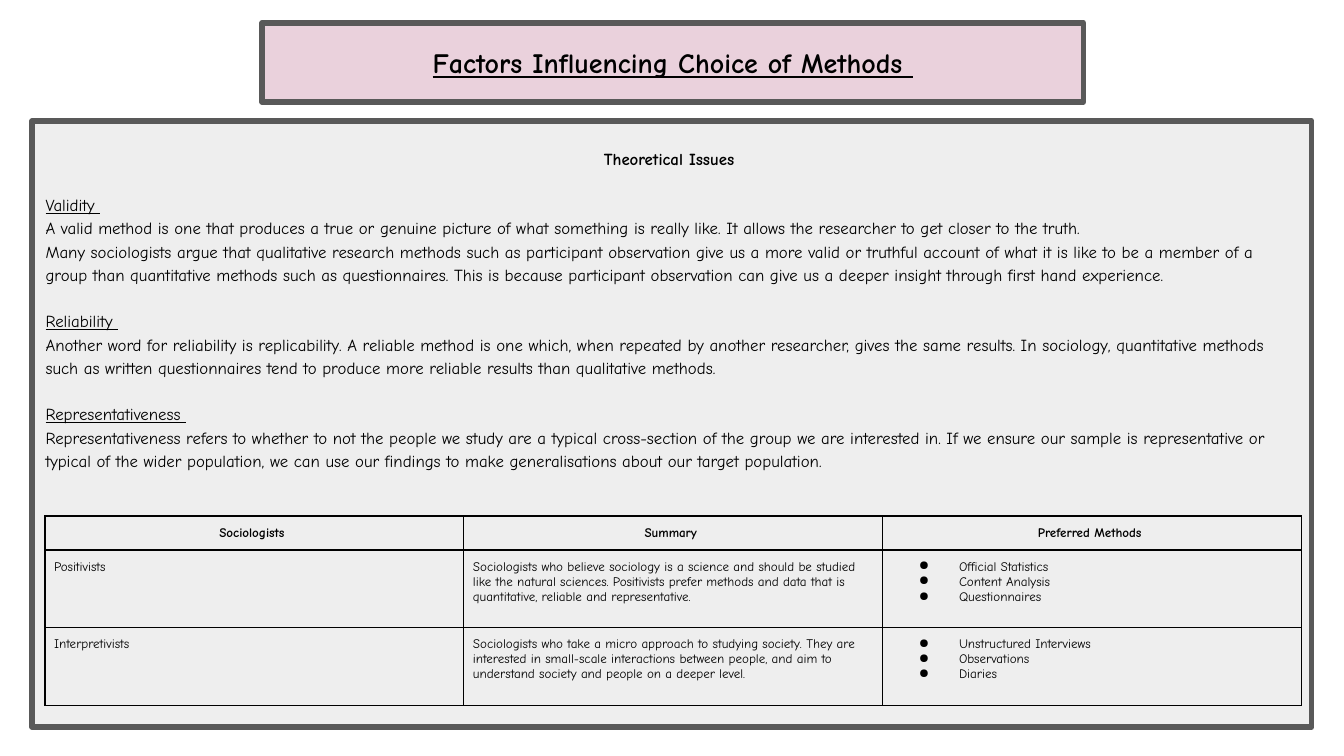
from lxml.etree import SubElement as Sub
from pptx import Presentation
from pptx.dml.color import RGBColor
from pptx.enum.text import MSO_ANCHOR as Anchor, PP_ALIGN as Align
from pptx.enum.shapes import MSO_SHAPE as Shape
from pptx.oxml import parse_xml
from pptx.oxml.ns import nsdecls, qn
from pptx.util import Pt

MARGINS = ("margin_left", "margin_right", "margin_top", "margin_bottom")
PLAIN = {"size": Pt(9), "bold": False, "underline": False}
BOLD = {**PLAIN, "bold": True}
HEAD = {**PLAIN, "underline": True}
TITLE = {"size": Pt(15), "bold": True, "underline": True}
SMALL = {**PLAIN, "size": Pt(7)}
LABEL = {**SMALL, "bold": True}


def rgb(code):
    return RGBColor.from_string(code)


def write(frame, text, style, align=Align.LEFT):
    """Fill the first paragraph if it is empty, else add one."""
    para = frame.paragraphs[0]
    if para.runs:
        para = frame.add_paragraph()
    para.alignment = align
    run = para.add_run()
    run.text = text
    run.font.name = "Comic Neue"
    run.font.color.rgb = rgb("000000")
    for name, value in style.items():
        setattr(run.font, name, value)
    return para


deck = Presentation()
deck.slide_width, deck.slide_height = Pt(720), Pt(405)
slide = deck.slides.add_slide(deck.slide_layouts[5])

# Title and panel boxes
title = slide.shapes.title
title.left, title.top, title.width, title.height = Pt(140.4), Pt(12.2), Pt(440), Pt(42.5)
panel = slide.shapes.add_shape(Shape.RECTANGLE, Pt(17.3), Pt(64.8), Pt(685.4), Pt(324.7))
panel.shadow.inherit = False
for box, fill, anchor in ((title, "EAD1DC", Anchor.MIDDLE), (panel, "EEEEEE", Anchor.TOP)):
    box.fill.solid()
    box.fill.fore_color.rgb = rgb(fill)
    box.line.color.rgb = rgb("595959")
    box.line.width = Pt(3)
    frame = box.text_frame
    frame.word_wrap = True
    frame.vertical_anchor = anchor
    for side in MARGINS:
        setattr(frame, side, Pt(7.2))
write(title.text_frame, "Factors Influencing Choice of Methods ", TITLE, Align.CENTER)

# Issues
issues = {
    "Validity ": [
        "A valid method is one that produces a true or genuine picture of what something is really like. "
        "It allows the researcher to get closer to the truth.",
        "Many sociologists argue that qualitative research methods such as participant observation give us "
        "a more valid or truthful account of what it is like to be a member of a group than quantitative "
        "methods such as questionnaires. This is because participant observation can give us a deeper "
        "insight through first hand experience.",
    ],
    "Reliability ": [
        "Another word for reliability is replicability. A reliable method is one which, when repeated by "
        "another researcher, gives the same results. In sociology, quantitative methods such as written "
        "questionnaires tend to produce more reliable results than qualitative methods.",
    ],
    "Representativeness ": [
        "Representativeness refers to whether to not the people we study are a typical cross-section of the "
        "group we are interested in. If we ensure our sample is representative or typical of the wider "
        "population, we can use our findings to make generalisations about our target population.",
    ],
}
frame = panel.text_frame
frame.margin_top = Pt(13)
write(frame, "Theoretical Issues ", BOLD, Align.CENTER)
for head, texts in issues.items():
    write(frame, head, HEAD).space_before = Pt(12.5)
    for text in texts:
        write(frame, text, PLAIN)
for para in frame.paragraphs:
    para.line_spacing = 1.15

# Table of sociologists
rows = [
    ["Sociologists ", "Summary ", "Preferred Methods "],
    ["Positivists",
     "Sociologists who believe sociology is a science and should be studied like the natural sciences. "
     "Positivists prefer methods and data that is quantitative, reliable and representative.",
     ["Official Statistics", "Content Analysis", "Questionnaires"]],
    ["Interpretivists",
     "Sociologists who take a micro approach to studying society. They are interested in small-scale "
     "interactions between people, and aim to understand society and people on a deeper level.",
     ["Unstructured Interviews", "Observations", "Diaries"]],
]
table = slide.shapes.add_table(3, 3, Pt(24), Pt(276.5), Pt(673.2), Pt(101.4)).table
table.first_row = table.horz_banding = False
for col in table.columns:
    col.width = Pt(224.4)
for row, height in zip(table.rows, (18.2, 41.6, 41.6)):
    row.height = Pt(height)

for r, row in enumerate(rows):
    for c, entry in enumerate(row):
        cell = table.cell(r, c)
        cell.fill.background()
        for side in MARGINS:
            setattr(cell, side, Pt(5))
        props = cell._tc.get_or_add_tcPr()
        for i, edge in enumerate(("lnL", "lnR", "lnT", "lnB")):
            props.insert(i, parse_xml(
                f'<a:{edge} {nsdecls("a")} w="{Pt(1)}"><a:solidFill>'
                f'<a:srgbClr val="000000"/></a:solidFill></a:{edge}>'))
        frame = cell.text_frame
        if r == 0:
            write(frame, entry, LABEL, Align.CENTER)
        elif isinstance(entry, str):
            write(frame, entry, SMALL)
        else:
            for item in entry:
                form = write(frame, item, SMALL)._p.get_or_add_pPr()
                form.set("marL", str(Pt(36)))
                form.set("indent", str(Pt(-21.5)))
                Sub(Sub(form, qn("a:buClr")), qn("a:srgbClr"), val="000000")
                Sub(form, qn("a:buChar"), char="●")

deck.save("out.pptx")
